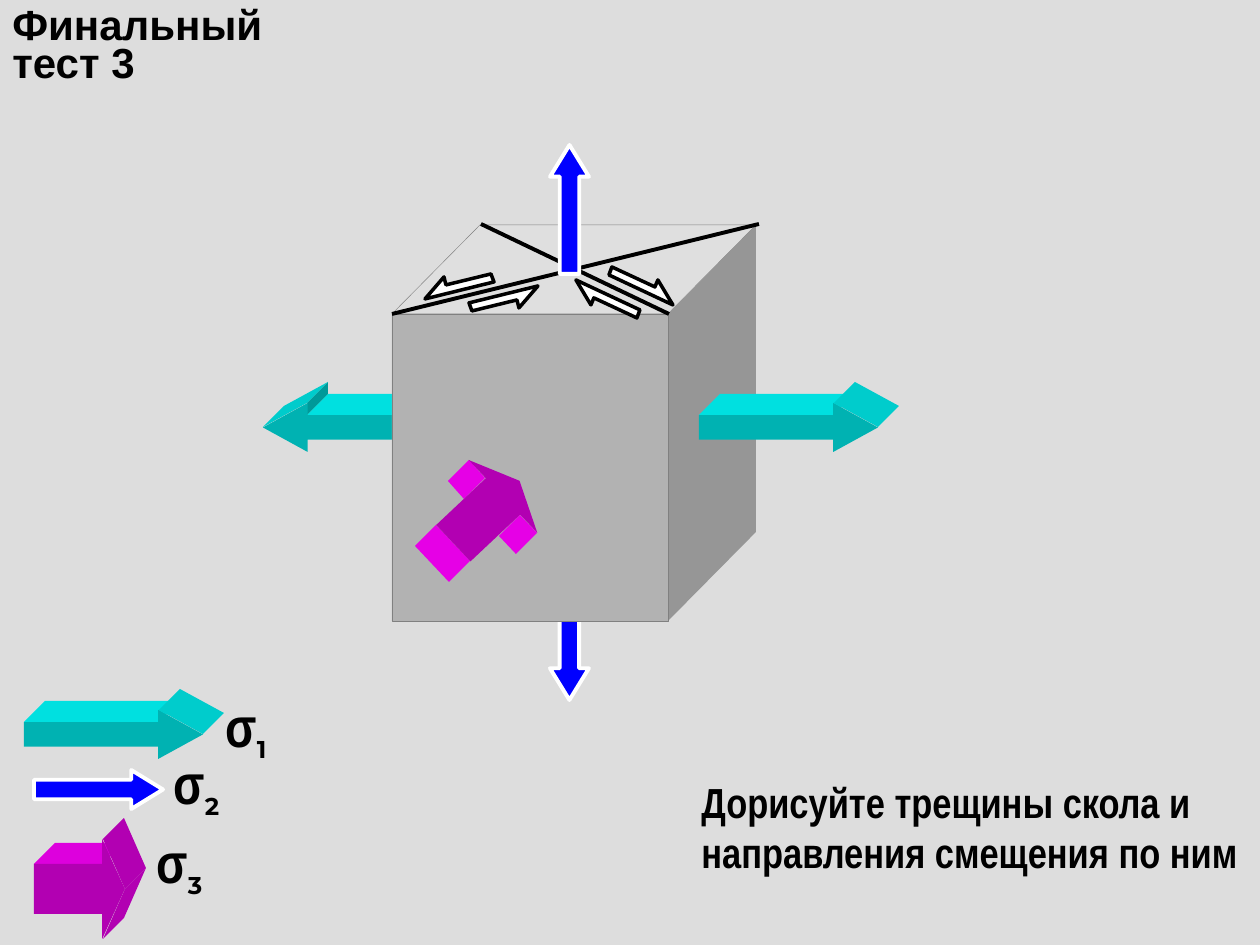
import pptx
import pptx.dml.color
import pptx.enum.shapes
import pptx.enum.text
import pptx.oxml.ns
import pptx.util
from lxml import etree

SCALE = 914400 // 126
COLORS = {
    "page": "DDDDDD", "black": "000000", "white": "FFFFFF", "blue": "0000FF",
    "cube_front": "B2B2B2", "cube_top": "DFDFDF", "cube_side": "969696", "edge": "808080",
    "teal": "00B2B2", "teal_top": "00E0E0", "teal_head": "00CCCC", "teal_back": "009999",
    "magenta": "B200B2", "magenta_top": "DD00DD", "magenta_end": "E600E6",
}
SHAPES = pptx.enum.shapes.MSO_SHAPE
ANCHORS = pptx.enum.text.MSO_ANCHOR


def px(value):
    return pptx.util.Emu(value * SCALE)


def color(name):
    return pptx.dml.color.RGBColor.from_string(COLORS[name])


class Painter:
    def __init__(self, page):
        self.page = page
        fill = page.background.fill
        fill.solid()
        fill.fore_color.rgb = color("page")

    def style(self, shape, fill, line=None, width=0):
        shape.shadow.inherit = False
        shape.fill.solid()
        shape.fill.fore_color.rgb = color(fill)
        if line:
            shape.line.color.rgb = color(line)
            shape.line.width = pptx.util.Pt(width)
        else:
            shape.line.fill.background()

    def preset(self, kind, bounds, fill, line=None, width=0, rotation=0, adjustments=()):
        shape = self.page.shapes.add_shape(kind, *map(px, bounds))
        for index, value in enumerate(adjustments):
            shape.adjustments[index] = value
        shape.rotation = rotation
        self.style(shape, fill, line, width)

    def polygon(self, points, fill, line=None, width=0):
        builder = self.page.shapes.build_freeform(*points[0], scale=SCALE)
        builder.add_line_segments(points[1:], close=True)
        self.style(builder.convert_to_shape(), fill, line, width)

    def extruded(self, edge, depth, fill, line=None, width=0):
        far = [(x + depth[0], y + depth[1]) for x, y in reversed(edge)]
        self.polygon(edge + far, fill, line, width)

    def fault(self, start, end):
        line = self.page.shapes.add_connector(
            pptx.enum.shapes.MSO_CONNECTOR.STRAIGHT, *map(px, start + end))
        line.line.color.rgb = color("black")
        line.line.width = pptx.util.Pt(2.25)
        etree.SubElement(line._element.spPr, pptx.oxml.ns.qn("a:effectLst"))

    def blue_arrow(self, left, top, rotation):
        self.preset(SHAPES.LEFT_ARROW, (left, top, 129, 39), "blue", "white", 2.25,
                    rotation, (0.5, 0.815))

    def teal_arrow(self, left, top, pointing_left=False):
        def at(x, y):
            return left + (179 - x if pointing_left else x), top + y

        depth = (21, -21)
        kind = SHAPES.LEFT_ARROW if pointing_left else SHAPES.RIGHT_ARROW
        self.extruded([at(0, 12), at(135, 12)], depth, "teal_top")
        if pointing_left:
            self.extruded([at(135, 0), at(135, 12)], depth, "teal_back")
        self.extruded([at(135, 0), at(179, 24)], depth, "teal_head")
        self.preset(kind, (left, top, 179, 49), "teal", adjustments=(0.5, 0.912))

    def magenta_arrow(self, left, top, rotation, depth, faces):
        for edge, fill in faces:
            self.extruded(edge, depth, fill)
        self.preset(SHAPES.RIGHT_ARROW, (left, top, 91, 100), "magenta",
                    rotation=rotation, adjustments=(0.5, 0.25))

    def slip_pair(self, points, total):
        opposite = [(total[0] - x, total[1] - y) for x, y in points]
        for outline in (points, opposite):
            self.polygon(outline, "white", "black", 2)

    def text(self, bounds, words, font, size, spacing=None, anchor=ANCHORS.TOP):
        box = self.page.shapes.add_textbox(*map(px, bounds))
        frame = box.text_frame
        frame.word_wrap = True
        frame.vertical_anchor = anchor
        para = frame.paragraphs[0]
        para.text = words
        para.line_spacing = spacing
        para.font.name = font
        para.font.size = pptx.util.Pt(size)
        para.font.bold = True
        para.font.color.rgb = color("black")
        return para

    def sigma(self, left, top, index):
        para = self.text((left, top, 90, 47), "σ", "Arial Narrow", 32, 0.5)
        span = para.add_run()
        span.text = str(index)
        span.font.name = "Montserrat"
        span.font.size = pptx.util.Pt(24)
        span.font._element.set("baseline", "-25000")


def main():
    deck = pptx.Presentation()
    deck.slide_width, deck.slide_height = px(1260), px(945)
    painter = Painter(deck.slides.add_slide(deck.slide_layouts[6]))

    painter.teal_arrow(263, 403, pointing_left=True)
    painter.blue_arrow(505, 616, 270)
    painter.text((0, 0, 292, 96), "Финальный тест 3", "Arial", 24, 0.75, ANCHORS.MIDDLE)
    painter.text((689, 770, 571, 113),
                 "Дорисуйте трещины скола и направления смещения по ним", "Arial Narrow", 24)

    cube_depth = (88, -89)
    painter.extruded([(392, 314), (668, 314)], cube_depth, "cube_top", "edge", 0.25)
    painter.extruded([(668, 314), (668, 621)], cube_depth, "cube_side")
    painter.preset(SHAPES.RECTANGLE, (392, 314, 276, 307), "cube_front", "edge", 0.25)

    painter.magenta_arrow(441, 462, 316.7, (-21, 21), [
        ([(436, 525), (470, 561)], "magenta_end"),
        ([(469, 460), (485, 478)], "magenta_end"),
        ([(537, 533), (520, 515)], "magenta_end"),
    ])
    painter.fault((392, 314), (759, 224))
    painter.fault((481, 224), (669, 314))
    painter.blue_arrow(505, 190, 90)
    painter.teal_arrow(699, 403)
    painter.slip_pair([(609, 275), (673, 305), (658, 280), (655, 287), (612, 267)], (1249, 585))
    painter.slip_pair([(494, 282), (425, 299), (444, 277), (446, 285), (491, 274)], (963, 585))

    painter.teal_arrow(24, 710)
    painter.magenta_arrow(34, 839, 0, (21, -21), [
        ([(34, 864), (103, 864)], "magenta_top"),
        ([(103, 839), (125, 889)], "magenta"),
        ([(125, 889), (103, 939)], "magenta"),
    ])
    painter.blue_arrow(34, 770, 180)
    for index, (left, top) in enumerate([(213, 713), (161, 770), (144, 849)], 1):
        painter.sigma(left, top, index)

    deck.save("out.pptx")


if __name__ == "__main__":
    main()
